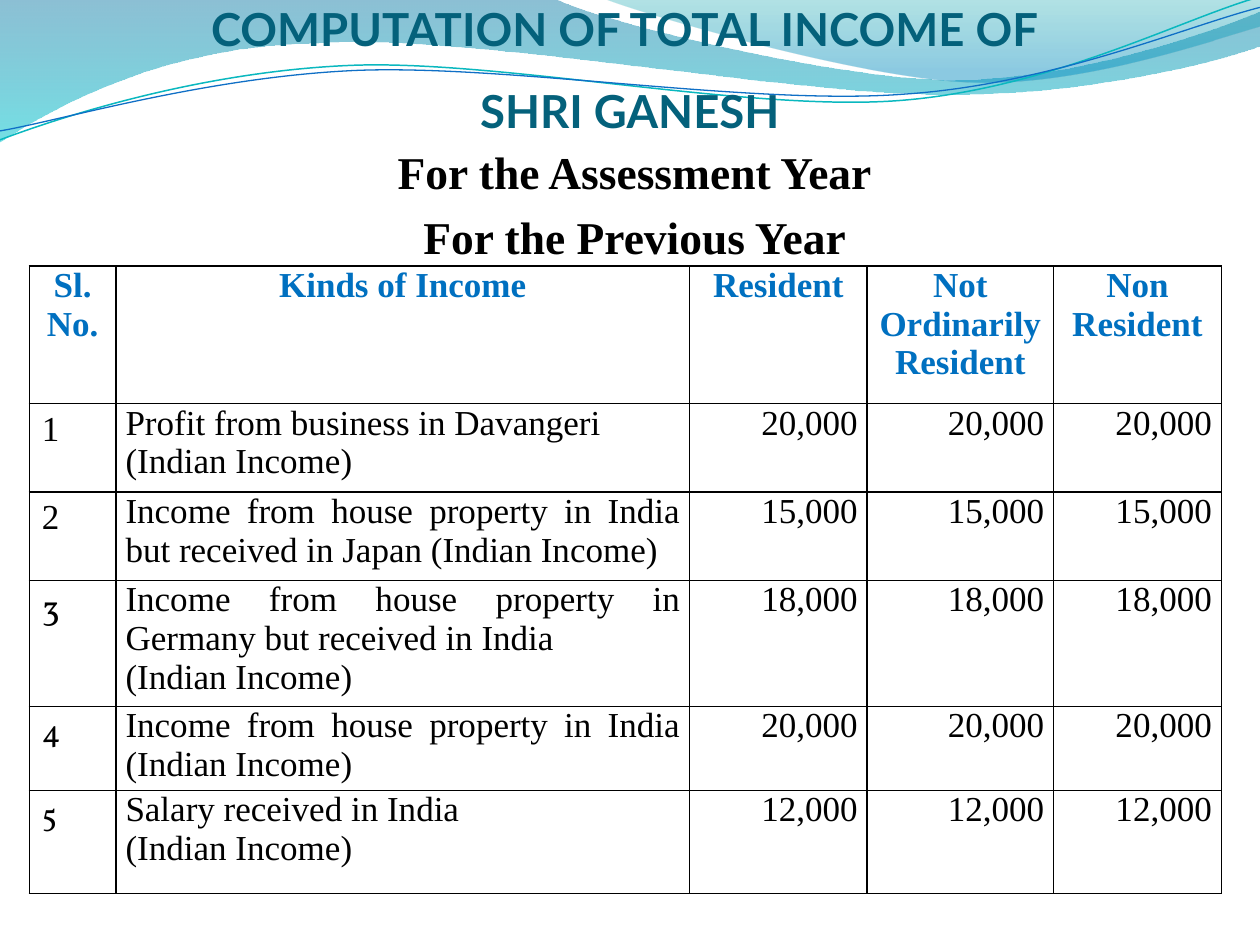
from pptx import Presentation
from pptx.dml.color import RGBColor as Rgb
from pptx.enum.text import MSO_ANCHOR as Anchor, PP_ALIGN as Align
from pptx.oxml import parse_xml
from pptx.oxml.ns import nsdecls, qn
from pptx.util import Cm, Pt
from lxml.etree import SubElement as Sub

# Content
TITLE = ["COMPUTATION OF TOTAL INCOME OF ", "SHRI GANESH"]
HEADS = ["For the Assessment Year", "For the Previous Year"]
COLS = [("Sl. No.", 1.75), ("Kinds of Income", 11.56), ("Resident", 3.58),
        ("Not Ordinarily Resident", 3.76), ("Non Resident", 3.38)]
HEAD_H = 2.78
TIMES, SERIF = "Times New Roman", "Vollkorn"
L, J = Align.LEFT, Align.JUSTIFY
# Number font and size, lines of text, alignment, amount in all three columns, least height
ROWS = [
    (TIMES, 20, ["Profit from business in Davangeri (Indian Income)"], L, "20,000", 1.78),
    (TIMES, 20, ["Income from house property in India but received in Japan "
                 "(Indian Income)"], J, "15,000", 1.78),
    (SERIF, 20, ["Income from house property in Germany but received in India",
                 "(Indian Income) "], J, "18,000", 1),
    (SERIF, 18, ["Income from house property in India (Indian Income)"], J, "20,000", 1.47),
    (SERIF, 18, ["Salary received in India ", "(Indian Income)"], J, "12,000", 2.08),
]
HEX = {"title": "04617B", "text": "000000", "head": "0070C0", "rule": "000000",
       "teal": "0AB8BF", "blue": "0F6FC6"}

# Waves in cm: a pair is a straight step, six numbers are a cubic curve
# Gradient stops are position, colour, opacity in percent
FILLS = [
    ([(0, 0), (11.18, -0.03), (12.09, 0.43, 16.87, 1.6, 19.25, 1.6),
      (21.67, 1.6, 24.33, 0.66, 25.4, 0.23), (25.43, 0.91),
      (24.97, 1.12, 22.1, 1.93, 18.95, 1.9), (15.8, 1.9, 9.7, 0.71, 6.53, 0.86),
      (3.28, 0.91, 1.17, 2.11, -0.03, 2.87), (0, 0)],
     [(0, "0074A1", 45), (1, "00C6CF", 55)]),
    ([(12.17, -0.03), (12.93, 0.28, 17.32, 1.57, 19.53, 1.65),
      (21.74, 1.75, 24.41, 0.81, 25.4, 0.53), (25.4, 0), (12.17, -0.03)],
     [(0, "00A1A9", 30), (0.8, "008BBF", 45)]),
]
LINES = [
    ([(0, 2.82), (1.22, 2.36, 4.01, 1.45, 7.04, 1.32),
      (10.03, 1.19, 15.06, 2.26, 18.11, 2.03),
      (21.16, 1.8, 23.83, 0.38, 25.35, -0.05)], "teal", 0.85),
    ([(0, 2.64), (1.19, 2.44, 4.17, 1.55, 7.19, 1.42),
      (10.24, 1.3, 15.16, 2.13, 18.21, 1.9),
      (21.23, 1.7, 23.9, 0.53, 25.4, 0.15)], "blue", 0.75),
]

deck = Presentation()
deck.slide_width, deck.slide_height = Cm(25.4), Cm(19.05)
slide = deck.slides.add_slide(deck.slide_layouts[6])
shapes = slide.shapes


def wave(segs, close):
    """Lay every point as a straight step, then join threes into curves."""
    pts = [(Cm(s[i]), Cm(s[i + 1])) for s in segs for i in range(0, len(s), 2)]
    pen = shapes.build_freeform(*pts[0])
    pen.add_line_segments(pts[1:], close=close)
    shape = pen.convert_to_shape()
    shape.shadow.inherit = False
    steps = iter(list(shape._element.iter(qn("a:lnTo"))))
    for seg in segs[1:]:
        first = next(steps)
        if len(seg) == 6:
            curve = parse_xml(f'<a:cubicBezTo {nsdecls("a")}/>')
            first.addprevious(curve)
            for step in (first, next(steps), next(steps)):
                curve.append(step[0])
                step.getparent().remove(step)
    return shape


def style(para, font, size, color, bold=False, align=Align.CENTER):
    para.alignment = align
    para.font.name, para.font.size, para.font.bold = font, Pt(size), bold
    para.font.color.rgb = Rgb.from_string(HEX[color])


def box(x, y, w, h):
    frame = shapes.add_textbox(Cm(x), Cm(y), Cm(w), Cm(h)).text_frame
    frame.word_wrap = True
    return frame


def write(frame, lines):
    """Put one line in each paragraph."""
    frame.text = lines[0]
    for line in lines[1:]:
        frame.add_paragraph().text = line
    return frame.paragraphs


def border(cell):
    props = cell._tc.get_or_add_tcPr()
    for i, side in enumerate(("lnL", "lnR", "lnT", "lnB")):
        props.insert(i, parse_xml(
            f'<a:{side} {nsdecls("a")} w="{Pt(1)}"><a:solidFill>'
            f'<a:srgbClr val="{HEX["rule"]}"/></a:solidFill></a:{side}>'))


# Waves at the top
for segs, stops in FILLS:
    shape = wave(segs, True)
    shape.line.fill.background()
    shape.fill.gradient()
    shape.fill.gradient_angle = 270
    for stop, (pos, color, _) in zip(shape.fill.gradient_stops, stops):
        stop.position = pos
        stop.color.rgb = Rgb.from_string(color)
    for clr, (_, _, alpha) in zip(shape._element.spPr.iter(qn("a:srgbClr")), stops):
        Sub(clr, qn("a:alpha")).set("val", str(alpha * 1000))
for segs, color, width in LINES:
    shape = wave(segs, False)
    shape.fill.background()
    shape.line.color.rgb = Rgb.from_string(HEX[color])
    shape.line.width = Pt(width)

# Title
frame = box(1.27, 0, 22.86, 2.77)
frame.vertical_anchor = Anchor.BOTTOM
frame.margin_left = frame.margin_right = frame.margin_bottom = 0
para = frame.paragraphs[0]
para.add_run().text = TITLE[0]
para.add_line_break()
para.add_run().text = TITLE[1]
para.line_spacing = 1.5
style(para, "Lato", 26, "title", True)

# Year headings
for para in write(box(0.8, 2.77, 24, 15.67), HEADS):
    para.space_before = Pt(6)
    style(para, TIMES, 26, "text", True)

# Income table
widths = [w for _, w in COLS]
heights = [HEAD_H] + [row[-1] for row in ROWS]
table = shapes.add_table(len(heights), len(COLS), Cm(0.59), Cm(5.36),
                         Cm(sum(widths)), Cm(sum(heights))).table
table.first_row = table.horz_banding = False
for col, w in zip(table.columns, widths):
    col.width = Cm(w)
for row, h in zip(table.rows, heights):
    row.height = Cm(h)


def fill(r, c, lines, font=TIMES, size=20, color="text", bold=False, align=Align.CENTER):
    cell = table.cell(r, c)
    cell.fill.background()
    border(cell)
    if r == 0 or c > 0:
        cell.margin_left = cell.margin_right = Cm(0.19)
        cell.margin_top = cell.margin_bottom = 0
    for para in write(cell.text_frame, lines):
        style(para, font, size, color, bold, align)


for c, (name, _) in enumerate(COLS):
    fill(0, c, [name], color="head", bold=True)
for r, (font, size, kind, align, amount, _) in enumerate(ROWS, 1):
    fill(r, 0, [str(r)], font, size, align=L)
    fill(r, 1, kind, align=align)
    for c in range(2, len(COLS)):
        fill(r, c, [amount], align=Align.RIGHT)

deck.save("out.pptx")
